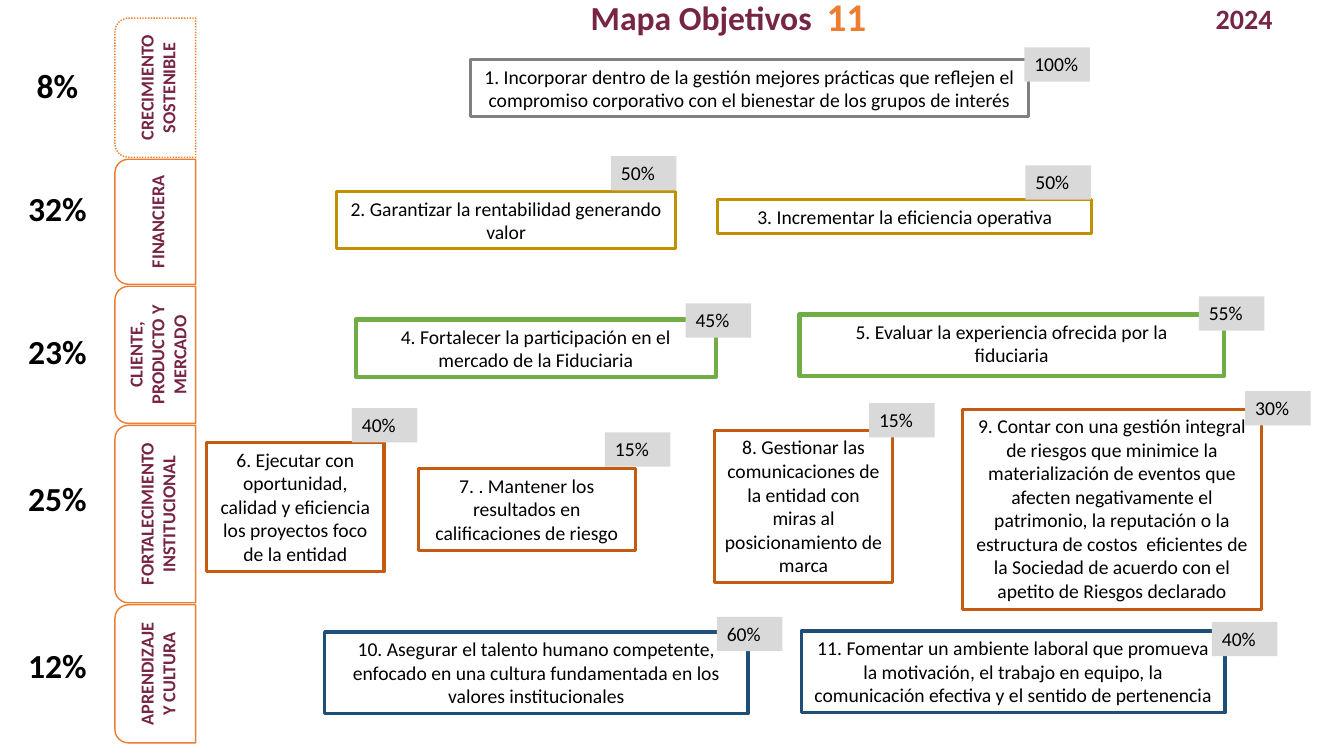
"""Build the 2024 strategic objectives map, one row per perspective."""
from dataclasses import dataclass
from pptx import Presentation
from pptx.dml.color import RGBColor
from pptx.enum.dml import MSO_LINE
from pptx.enum.shapes import MSO_SHAPE as Kind
from pptx.enum.text import MSO_ANCHOR as Anchor, MSO_AUTO_SIZE as Auto, PP_ALIGN as Align
from pptx.util import Inches, Pt


@dataclass(frozen=True)
class Theme:
    font: str = "Calibri"
    ink: str = "000000"
    plum: str = "762544"
    wine: str = "772544"
    orange: str = "ED7D31"
    badge: str = "D9D9D9"
    gray: str = "808080"
    gold: str = "BF9000"
    green: str = "70AD47"
    rust: str = "C55A11"
    blue: str = "1F4E79"
    body: int = 14
    tab: int = 13
    year: int = 20
    head: int = 24
    count: int = 28
    thin: float = 1
    edge: float = 2.25
    bold: float = 3


T = Theme()

HEADS = [
    ("Mapa Objetivos", (3.74, -0.06, 6.43, 0.51),
     dict(size=T.head, color=T.plum, anchor=Anchor.MIDDLE, space=0.9)),
    ("2024", (11.34, -0.03, 2, 0.44), dict(size=T.year, color=T.plum, grow=True)),
    ("11", (7.95, -0.13, 0.89, 0.57), dict(size=T.count, color=T.orange, grow=True)),
]

# name, tab length, weight, weight top, colour, goals: text, box, badge text, badge corner
ROWS = [
    ("CRECIMIENTO SOSTENIBLE", 1.38, "8%", 0.48, T.gray, [
        ("1. Incorporar dentro de la gestión mejores prácticas que reflejen el "
         "compromiso corporativo con el bienestar de los grupos de interés",
         (4.67, 0.59, 5.53, 0.57), "100%", (10.16, 0.47)),
    ]),
    ("FINANCIERA", 1.24, "32%", 1.7, T.gold, [
        ("2. Garantizar la rentabilidad generando valor",
         (3.34, 1.9, 3.36, 0.57), "50%", (6.06, 1.55)),
        ("3. Incrementar la eficiencia operativa",
         (7.12, 1.98, 3.71, 0.34), "50%", (10.17, 1.64)),
    ]),
    ("CLIENTE, PRODUCTO Y MERCADO", 1.36, "23%", 3.12, T.green, [
        ("4. Fortalecer la participación en el mercado de la Fiduciaria",
         (3.53, 3.17, 3.57, 0.57), "45%", (6.8, 3.01)),
        ("5. Evaluar la experiencia ofrecida por la\nfiduciaria",
         (7.93, 3.12, 4.21, 0.61), "55%", (11.89, 2.94)),
    ]),
    ("FORTALECIMIENTO INSTITUCIONAL", 1.76, "25%", 4.58, T.rust, [
        ("6. Ejecutar con oportunidad, calidad y eficiencia los proyectos foco "
         "de la entidad", (2.05, 4.39, 1.76, 1.28), "40%", (3.49, 4.05)),
        ("7. . Mantener los resultados en calificaciones de riesgo",
         (4.15, 4.65, 2.15, 0.81), "15%", (6, 4.29)),
        ("8. Gestionar las comunicaciones de la entidad con miras al "
         "posicionamiento de marca", (7.09, 4.27, 1.76, 1.51), "15%", (8.62, 4)),
        ("9. Contar con una gestión integral de riesgos que minimice la "
         "materialización de eventos que afecten negativamente el patrimonio, "
         "la reputación o la estructura de costos  eficientes de la Sociedad de "
         "acuerdo con el apetito de Riesgos declarado",
         (9.55, 4.06, 2.96, 1.99), "30%", (12.35, 3.88)),
    ]),
    ("APRENDIZAJE Y CULTURA", 1.37, "12%", 6.24, T.blue, [
        ("10. Asegurar el talento humano competente, enfocado en una cultura "
         "fundamentada en los valores institucionales",
         (3.22, 6.27, 4.2, 0.81), "60%", (7.11, 6.12)),
        ("11. Fomentar un ambiente laboral que promueva la motivación, el "
         "trabajo en equipo, la comunicación efectiva y el sentido de pertenencia",
         (7.95, 6.26, 4.2, 0.81), "40%", (12.02, 6.17)),
    ]),
]

TAB_TOP, TAB_GAP, TAB_MID, TAB_DEEP = 0.18, 0.02, 1.54, 0.8
WEIGHT_SIZE = (1.14, 0.77)
BADGE_SIZE = (0.65, 0.34)


def write(shape, text, size=T.body, color=T.ink, bold=True, align=Align.CENTER,
          anchor=Anchor.TOP, space=None, grow=False):
    frame = shape.text_frame
    frame.word_wrap = True
    frame.vertical_anchor = anchor
    frame.auto_size = Auto.SHAPE_TO_FIT_TEXT if grow else Auto.NONE
    frame.text = text
    for para in frame.paragraphs:
        para.alignment = align
        if space:
            para.line_spacing = space
        for run in para.runs:
            font = run.font
            font.name, font.size, font.bold = T.font, Pt(size), bold
            font.color.rgb = RGBColor.from_string(color)


def label(slide, text, box, **style):
    write(slide.shapes.add_textbox(*map(Inches, box)), text, **style)


def draw(slide, kind, box, fill=None, line=None, width=T.edge):
    shape = slide.shapes.add_shape(kind, *map(Inches, box))
    shape.shadow.inherit = False
    if fill:
        shape.fill.solid()
        shape.fill.fore_color.rgb = RGBColor.from_string(fill)
    else:
        shape.fill.background()
    if line:
        shape.line.color.rgb = RGBColor.from_string(line)
        shape.line.width = Pt(width)
    else:
        shape.line.fill.background()
    return shape


def add_tab(slide, name, top, span, dotted):
    box = (TAB_MID - span / 2, top + (span - TAB_DEEP) / 2, span, TAB_DEEP)
    tab = draw(slide, Kind.ROUND_2_SAME_RECTANGLE, box, line=T.orange, width=T.thin)
    tab.rotation = 270
    if dotted:
        tab.line.dash_style = MSO_LINE.ROUND_DOT
    write(tab, name, size=T.tab, color=T.wine, anchor=Anchor.MIDDLE)


def add_goal(slide, text, box, share, corner, color):
    green = color == T.green
    goal = draw(slide, Kind.RECTANGLE, box, line=color, width=T.bold if green else T.edge)
    write(goal, text, bold=False, grow=not green)
    badge = draw(slide, Kind.RECTANGLE, corner + BADGE_SIZE, fill=T.badge)
    write(badge, share, bold=False, align=Align.LEFT, grow=True)


def main():
    deck = Presentation()
    deck.slide_width, deck.slide_height = Inches(13.33), Inches(7.5)
    slide = deck.slides.add_slide(deck.slide_layouts[6])
    for text, box, style in HEADS:
        label(slide, text, box, **style)
    top = TAB_TOP
    for row, (name, span, weight, high, color, goals) in enumerate(ROWS):
        add_tab(slide, name, top, span, dotted=row == 0)
        label(slide, weight, (0, high) + WEIGHT_SIZE, size=T.head,
              anchor=Anchor.MIDDLE, space=0.9)
        for goal in goals:
            add_goal(slide, *goal, color)
        top += span + TAB_GAP
    deck.save("out.pptx")


if __name__ == "__main__":
    main()
